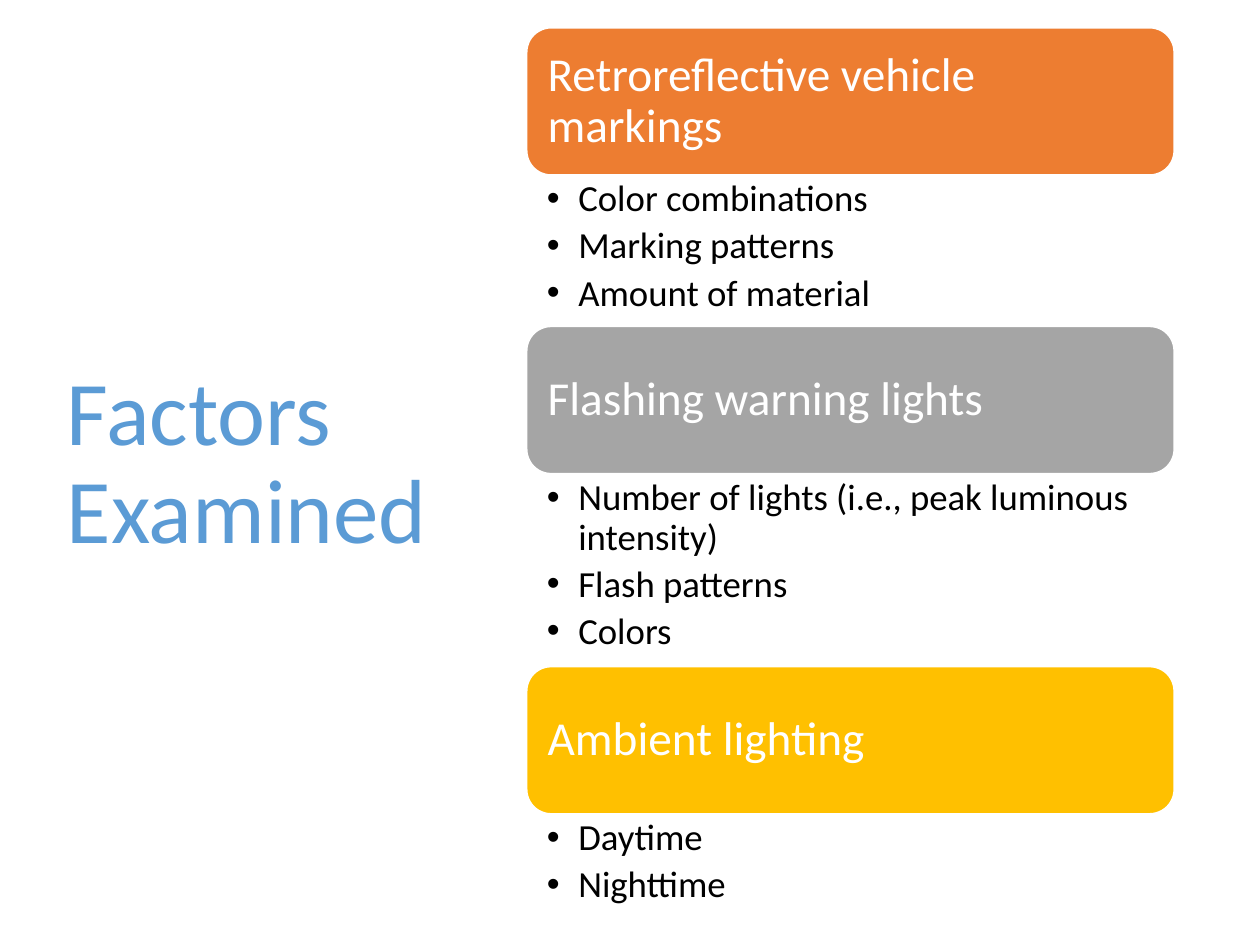
from lxml import etree
from pptx import Presentation
from pptx import util as u
from pptx.dml.color import RGBColor
from pptx.enum import shapes, text
from pptx.oxml.ns import qn

BLUE = RGBColor(0x5B, 0x9B, 0xD5)
ORANGE = RGBColor(0xED, 0x7D, 0x31)
GRAY = RGBColor(0xA5, 0xA5, 0xA5)
GOLD = RGBColor(0xFF, 0xC0, 0x00)
WHITE = RGBColor(0xFF, 0xFF, 0xFF)
BLACK = RGBColor(0, 0, 0)

LEFT, WIDTH = 4.18, 5.14
HEADING_HEIGHT = 1.17

# Heading, colour, top, list height, list placeholder index, factors
GROUPS = [
    ("Retroreflective vehicle markings", ORANGE, 0.22, 1.19, 1,
     ["Color combinations", "Marking patterns", "Amount of material"]),
    ("Flashing warning lights", GRAY, 2.59, 1.53, 2,
     ["Number of lights (i.e., peak luminous intensity)", "Flash patterns", "Colors"]),
    ("Ambient lighting", GOLD, 5.29, 0.79, 4,
     ["Daytime", "Nighttime"]),
]


def apply(target, values):
    for name, value in values.items():
        setattr(target, name, value)


class FactorSlide:
    """Holds the text style and the current slide."""

    font = "Calibri"
    paragraph_format = {"alignment": text.PP_ALIGN.LEFT, "line_spacing": 0.9,
                        "space_before": u.Pt(0)}

    def __init__(self, slide):
        self.slide = slide

    def place(self, shape, left, top, width, height):
        apply(shape, {"left": u.Inches(left), "top": u.Inches(top),
                      "width": u.Inches(width), "height": u.Inches(height)})

    def set_text(self, frame, lines, size, color, anchor, insets, space_after=0):
        left, top, right, bottom = map(u.Inches, insets)
        apply(frame, {"text": "\n".join(lines), "word_wrap": True,
                      "auto_size": text.MSO_AUTO_SIZE.NONE, "vertical_anchor": anchor,
                      "margin_left": left, "margin_top": top,
                      "margin_right": right, "margin_bottom": bottom})
        for paragraph in frame.paragraphs:
            apply(paragraph, self.paragraph_format)
            paragraph.space_after = u.Pt(space_after)
            for run in paragraph.runs:
                apply(run.font, {"name": self.font, "size": u.Pt(size), "bold": False})
                run.font.color.rgb = color

    def title(self, wording):
        title = self.slide.shapes.title
        self.place(title, 0.43, 0.68, 3.12, 6.02)
        self.set_text(title.text_frame, [wording], 52, BLUE,
                      text.MSO_ANCHOR.MIDDLE, (0.1, 0.05, 0.1, 0.05))

    def heading(self, wording, color, top):
        heading = self.slide.shapes.add_shape(
            shapes.MSO_SHAPE.ROUNDED_RECTANGLE, u.Inches(LEFT), u.Inches(top),
            u.Inches(WIDTH), u.Inches(HEADING_HEIGHT))
        heading.shadow.inherit = False
        heading.fill.solid()
        heading.fill.fore_color.rgb = color
        heading.line.color.rgb = WHITE
        heading.line.width = u.Pt(1)
        self.set_text(heading.text_frame, [wording], 27, WHITE,
                      text.MSO_ANCHOR.MIDDLE, (0.11, 0.11, 0.11, 0.11))

    def bullets(self, index, factors, top, height):
        body = self.slide.placeholders[index]
        self.place(body, LEFT, top, WIDTH, height)
        self.set_text(body.text_frame, factors, 21, BLACK,
                      text.MSO_ANCHOR.TOP, (0.16, 0.04, 0.21, 0.04), space_after=4.2)
        indent = u.Inches(0.25)
        for paragraph in body.text_frame.paragraphs:
            paragraph.level = 1
            properties = paragraph._p.get_or_add_pPr()
            properties.set("marL", str(indent))
            properties.set("indent", str(-indent))
            etree.SubElement(properties, qn("a:buFont"), typeface="Arial")
            etree.SubElement(properties, qn("a:buChar"), char="•")

    def remove_empty(self):
        for placeholder in list(self.slide.placeholders):
            if not placeholder.text_frame.text:
                placeholder.element.getparent().remove(placeholder.element)


def main():
    deck = Presentation()
    apply(deck, {"slide_width": u.Inches(10), "slide_height": u.Inches(7.5)})
    # The Comparison layout offers enough body placeholders for three lists
    factors_slide = FactorSlide(deck.slides.add_slide(deck.slide_layouts[4]))

    factors_slide.title("Factors Examined")
    for wording, color, top, list_height, index, factors in GROUPS:
        factors_slide.heading(wording, color, top)
        factors_slide.bullets(index, factors, top + HEADING_HEIGHT, list_height)
    factors_slide.remove_empty()

    deck.save("out.pptx")


if __name__ == "__main__":
    main()
